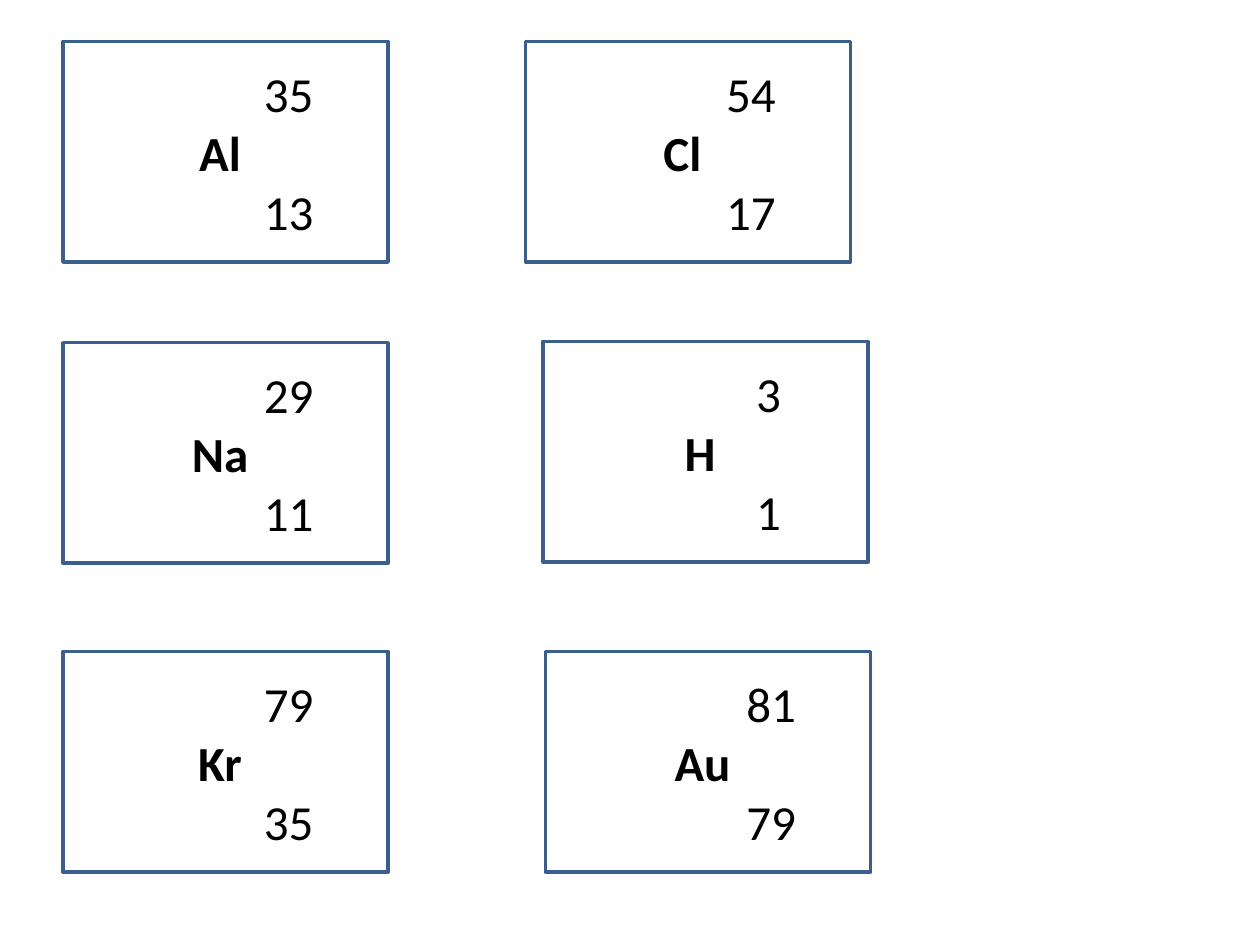
from typing import NamedTuple

from pptx import Presentation
from pptx.dml.color import RGBColor
from pptx.enum import shapes, text
from pptx.util import Inches, Pt

CARD_W, CARD_H = 2.58, 1.75
TAB_W = 1


class Element(NamedTuple):
    symbol: str
    mass: int
    number: int
    left: float
    top: float


ELEMENTS = [
    Element("Al", 35, 13, 0.5, 0.33),
    Element("Cl", 54, 17, 4.17, 0.33),
    Element("Na", 29, 11, 0.5, 2.72),
    Element("H", 3, 1, 4.31, 2.71),
    Element("Kr", 79, 35, 0.5, 5.17),
    Element("Au", 81, 79, 4.33, 5.17),
]


def rgb(value: str) -> RGBColor:
    return RGBColor.from_string(value)


def write(p, content: str, *, bold: bool = False, size: int = 28,
          color: str = "000000", font: str = "Calibri") -> None:
    p.alignment = text.PP_ALIGN.CENTER
    p._p.get_or_add_pPr().set("defTabSz", str(Inches(TAB_W)))
    r = p.add_run()
    r.text = content
    r.font.name = font
    r.font.size = Pt(size)
    r.font.bold = bold
    r.font.color.rgb = rgb(color)


def draw_card(s, element: Element) -> None:
    """Outline a card with the mass above and the number below the symbol."""
    sp = s.shapes.add_shape(
        shapes.MSO_SHAPE.RECTANGLE, Inches(element.left), Inches(element.top),
        Inches(CARD_W), Inches(CARD_H))
    sp.shadow.inherit = False
    sp.fill.background()
    sp.line.color.rgb = rgb("3A5F8C")
    sp.line.width = Pt(2)
    tf = sp.text_frame
    tf.word_wrap = True
    tf.vertical_anchor = text.MSO_ANCHOR.MIDDLE
    # A tab sets the numbers to the right of the symbol.
    write(tf.paragraphs[0], f"\t{element.mass}")
    write(tf.add_paragraph(), f"{element.symbol} ", bold=True)
    write(tf.add_paragraph(), f"\t{element.number}")


def main() -> None:
    prs = Presentation()
    prs.slide_width, prs.slide_height = Inches(10), Inches(7.5)
    s = prs.slides.add_slide(prs.slide_layouts[6])
    for element in ELEMENTS:
        draw_card(s, element)
    prs.save("out.pptx")


if __name__ == "__main__":
    main()
